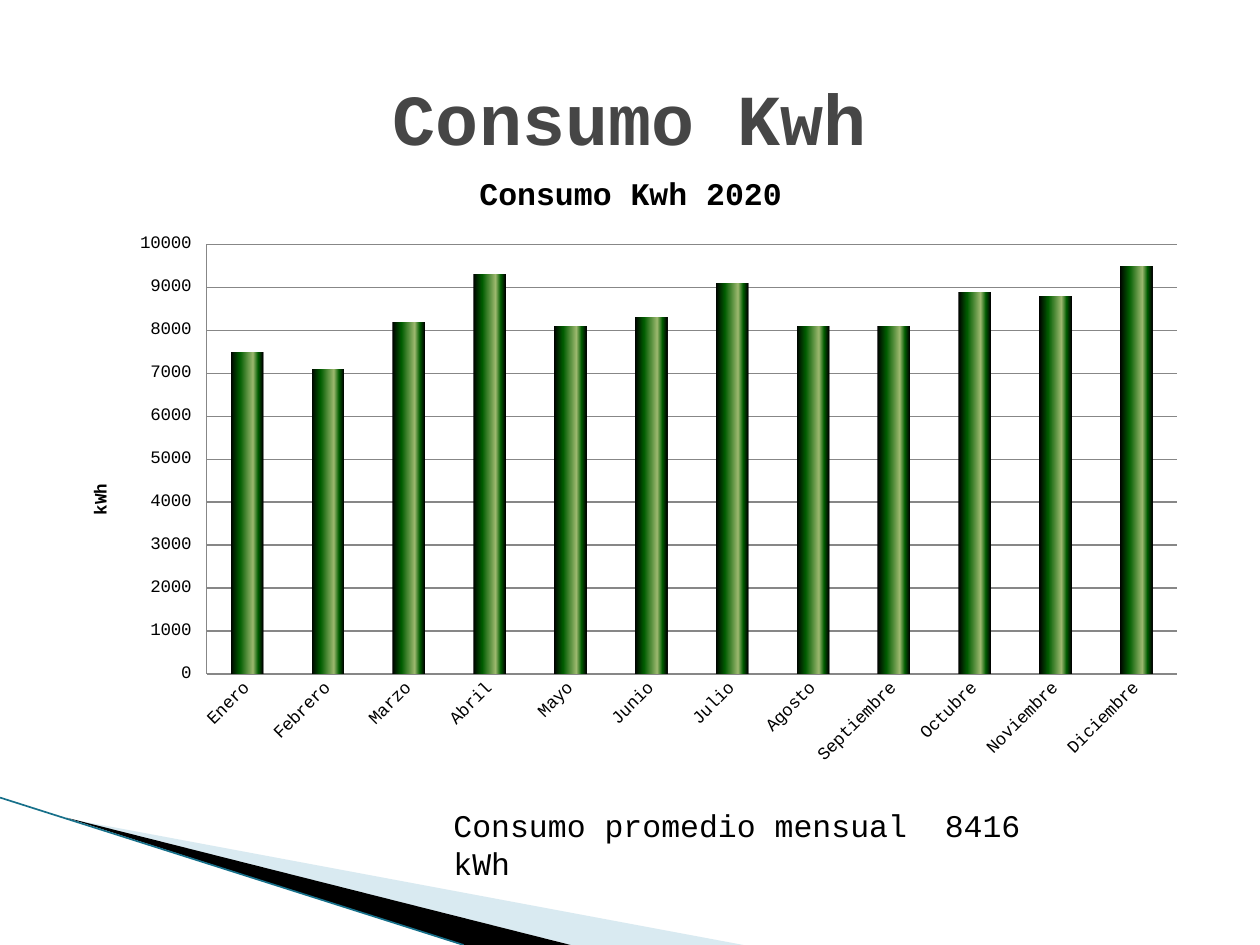
from dataclasses import dataclass

from lxml import etree
from pptx import Presentation
from pptx.chart.data import CategoryChartData
from pptx.dml.color import RGBColor
from pptx.enum.chart import XL_CHART_TYPE, XL_TICK_MARK
from pptx.enum.shapes import MSO_CONNECTOR
from pptx.enum.text import MSO_ANCHOR, PP_ALIGN
from pptx.oxml.ns import qn
from pptx.util import Inches, Pt

COLUMNS = XL_CHART_TYPE.COLUMN_CLUSTERED
NO_TICK = XL_TICK_MARK.NONE
STRAIGHT = MSO_CONNECTOR.STRAIGHT
MIDDLE, TOP = MSO_ANCHOR.MIDDLE, MSO_ANCHOR.TOP
CENTER, LEFT = PP_ALIGN.CENTER, PP_ALIGN.LEFT

FONT = "Courier New"
COLORS = {
    "black": "000000",
    "title": "464646",
    "pale": "A0CBDC",
    "teal": "17708A",
    "grid": "878787",
    "green": "005C00",
    "light_green": "9CB86E",
}
CHART_WIDTH, CHART_HEIGHT = 9, 4.95
BAR_STOPS = [(0, "black"), (28, "green"), (69, "light_green"), (85, "green"), (100, "black")]
MONTHLY_KWH = {
    "Enero": 7500, "Febrero": 7100, "Marzo": 8200, "Abril": 9300,
    "Mayo": 8100, "Junio": 8300, "Julio": 9100, "Agosto": 8100,
    "Septiembre": 8100, "Octubre": 8900, "Noviembre": 8800, "Diciembre": 9500,
}


@dataclass
class Label:
    text: str
    box: tuple[float, float, float, float]
    size: float
    color: str
    bold: bool = False
    align: PP_ALIGN = LEFT
    anchor: MSO_ANCHOR = TOP


@dataclass
class Wedge:
    points: list[tuple[float, float]]
    color: str
    opacity: int = 100


LABELS = [
    Label("Consumo Kwh", (0.5, 0.3, 9, 1.25), 41, "title", True, CENTER, MIDDLE),
    Label("Consumo promedio mensual  8416 kWh", (3.5, 6.35, 5.2, 0.7), 18, "black"),
]
WEDGES = [
    Wedge([(0.55, 6.5), (5.9, 7.5), (4.53, 7.5)], "pale", 40),
    Wedge([(0.53, 6.49), (4.53, 7.5), (3.67, 7.5)], "black"),
]


def rgb(name: str) -> RGBColor:
    return RGBColor.from_string(COLORS[name])


def style_font(font, size: float, color: str, bold: bool = False) -> None:
    font.name, font.size, font.bold = FONT, Pt(size), bold
    font.color.rgb = rgb(color)


def add_label(s, label: Label) -> None:
    tf = s.shapes.add_textbox(*map(Inches, label.box)).text_frame
    tf.word_wrap = True
    tf.vertical_anchor = label.anchor
    tf.text = label.text
    p = tf.paragraphs[0]
    p.alignment = label.align
    style_font(p.runs[0].font, label.size, label.color, label.bold)


def add_wedge(s, wedge: Wedge) -> None:
    start, *rest = [(Inches(x), Inches(y)) for x, y in wedge.points]
    builder = s.shapes.build_freeform(*start)
    builder.add_line_segments(rest)
    sp = builder.convert_to_shape()
    sp.shadow.inherit = False
    sp.line.fill.background()
    sp.fill.solid()
    sp.fill.fore_color.rgb = rgb(wedge.color)
    if wedge.opacity < 100:
        color = sp._element.spPr.find(".//" + qn("a:srgbClr"))
        etree.SubElement(color, qn("a:alpha"), val=str(wedge.opacity * 1000))


def add_edge(s) -> None:
    line = s.shapes.add_connector(STRAIGHT, Inches(0), Inches(6.33), Inches(3.68), Inches(7.5))
    line.line.color.rgb = rgb("teal")
    line.line.width = Pt(0.95)
    etree.SubElement(line._element.spPr, qn("a:effectLst"))


def set_layout(element, index: int, **inches: float) -> None:
    """Place a chart part, measured in inches from the chart's top left corner."""
    for old in element.findall(qn("c:layout")):
        element.remove(old)
    layout = etree.Element(qn("c:layout"))
    manual = etree.SubElement(layout, qn("c:manualLayout"))
    if "w" in inches:
        etree.SubElement(manual, qn("c:layoutTarget"), val="inner")
    for key in ("x", "y"):
        etree.SubElement(manual, qn(f"c:{key}Mode"), val="edge")
    for key, value in inches.items():
        whole = CHART_WIDTH if key in "xw" else CHART_HEIGHT
        etree.SubElement(manual, qn(f"c:{key}"), val=str(value / whole))
    element.insert(index, layout)


def set_title(title, text: str, size: float, x: float, y: float) -> None:
    title.text_frame.text = text
    style_font(title.text_frame.paragraphs[0].runs[0].font, size, "black", True)
    set_layout(title._element, 1, x=x, y=y)


def fill_bars(series) -> None:
    """Give the bars a left-to-right gradient with all of its stops."""
    fill = series.format.fill
    fill.gradient()
    fill.gradient_angle = 0
    stops = series._element.find(".//" + qn("a:gsLst"))
    for old in list(stops):
        stops.remove(old)
    for position, name in BAR_STOPS:
        stop = etree.SubElement(stops, qn("a:gs"), pos=str(position * 1000))
        etree.SubElement(stop, qn("a:srgbClr"), val=COLORS[name])


def add_consumption_chart(s) -> None:
    data = CategoryChartData()
    data.categories = list(MONTHLY_KWH)
    data.add_series("Series 1", list(MONTHLY_KWH.values()))
    box = map(Inches, (0.51, 1.23, CHART_WIDTH, CHART_HEIGHT))
    chart = s.shapes.add_chart(COLUMNS, *box, data).chart
    chart.has_legend = False
    style_font(chart.font, 10, "black")
    chart.has_title = True
    set_title(chart.chart_title, "Consumo Kwh 2020", 18, 3.25, 0.12)
    set_layout(chart._chartSpace.chart.plotArea, 0, x=1.13, y=0.71, w=7.7, h=3.41)

    plot = chart.plots[0]
    plot.gap_width = 150
    plot.vary_by_categories = False
    fill_bars(plot.series[0])

    months, kwh = chart.category_axis, chart.value_axis
    for axis in (months, kwh):
        axis.major_tick_mark = axis.minor_tick_mark = NO_TICK
        axis.format.line.color.rgb = rgb("grid")
        style_font(axis.tick_labels.font, 10, "black")
    months._element.find(qn("c:txPr")).find(qn("a:bodyPr")).set("rot", "-2700000")

    kwh.minimum_scale, kwh.maximum_scale, kwh.major_unit = 0, 10000, 1000
    kwh.has_major_gridlines = True
    kwh.major_gridlines.format.line.color.rgb = rgb("grid")
    kwh.tick_labels.number_format = "0_ ;[Red]\\-0\\ "
    kwh.tick_labels.number_format_is_linked = False
    kwh.has_title = True
    set_title(kwh.axis_title, "kWh", 10, 0.18, 2.59)
    body = kwh.axis_title._element.find(".//" + qn("a:bodyPr"))
    body.set("rot", "-5400000")
    body.set("vert", "horz")


def main() -> None:
    prs = Presentation()
    prs.slide_width, prs.slide_height = Inches(10), Inches(7.5)
    s = prs.slides.add_slide(prs.slide_layouts[6])
    for wedge in WEDGES:
        add_wedge(s, wedge)
    add_edge(s)
    add_consumption_chart(s)
    for label in LABELS:
        add_label(s, label)
    prs.save("out.pptx")


if __name__ == "__main__":
    main()
